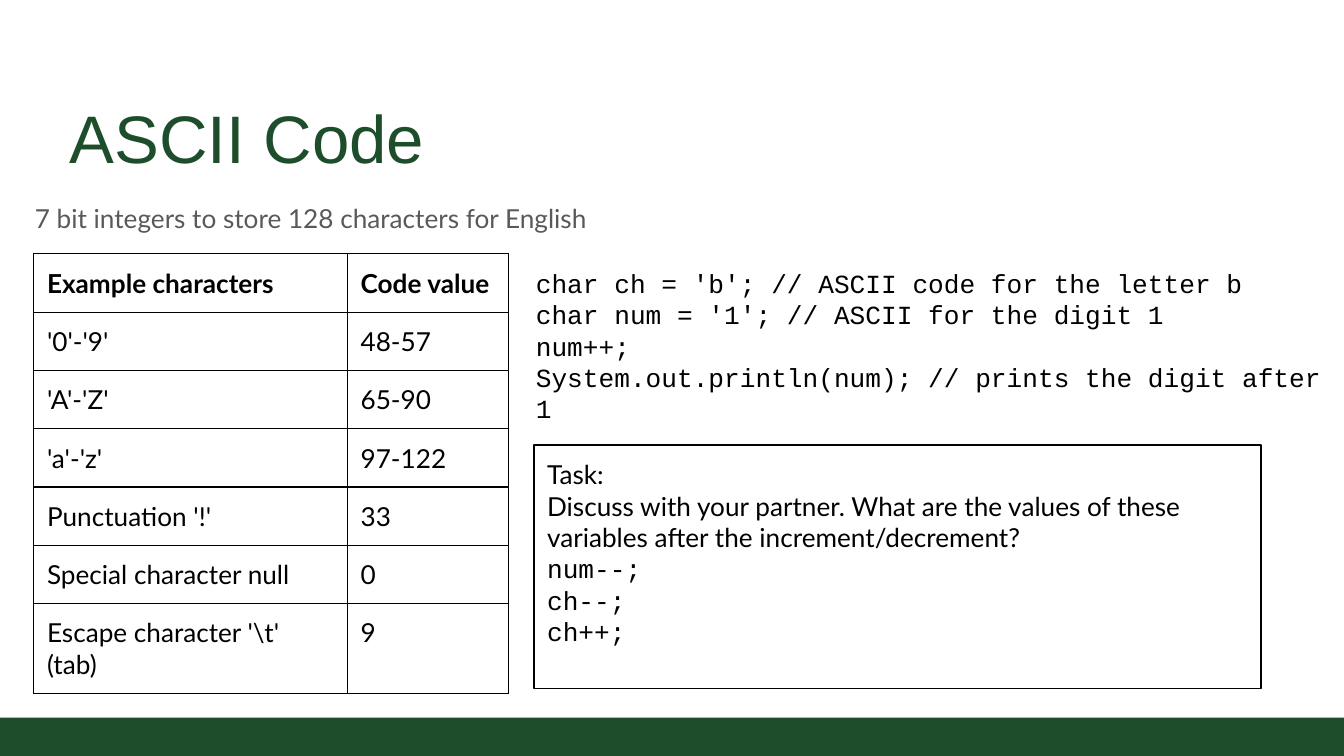
from dataclasses import dataclass
from typing import NamedTuple

from lxml.etree import SubElement
from pptx import Presentation
from pptx.dml.color import RGBColor
from pptx.enum.shapes import MSO_SHAPE
from pptx.enum.text import MSO_ANCHOR, PP_ALIGN
from pptx.oxml.ns import qn
from pptx.slide import Slide
from pptx.util import Pt


@dataclass(frozen=True)
class Theme:
    green: str = "1E4D2B"
    grey: str = "59595B"
    black: str = "000000"
    heading: str = "Arial"
    prose: str = "Lato"
    code: str = "Courier New"
    title_size: float = 36
    text_size: float = 14
    rule: float = 0.75
    inset: float = 7.2


class Box(NamedTuple):
    left: float
    top: float
    width: float
    height: float

    def lengths(self) -> list[Pt]:
        return [Pt(value) for value in self]


class Line(NamedTuple):
    text: str
    font: str


class CodeRange(NamedTuple):
    characters: str
    values: str


THEME = Theme()
COLUMN_WIDTHS = (168, 86.4)
ROW_HEIGHT = 30.25
CODE_RANGES = [
    CodeRange("Example characters", "Code value"),
    CodeRange("'0'-'9'", "48-57"),
    CodeRange("'A'-'Z'", "65-90"),
    CodeRange("'a'-'z'", "97-122"),
    CodeRange("Punctuation '!'", "33"),
    CodeRange("Special character null", "0"),
    CodeRange("Escape character '\\t' (tab)", "9"),
]
CODE = [
    "char ch = 'b'; // ASCII code for the letter b",
    "char num = '1'; // ASCII for the digit 1",
    "num++;",
    "System.out.println(num); // prints the digit after 1",
]
TASK = [
    "Task:",
    "Discuss with your partner. What are the values of these "
    "variables after the increment/decrement?",
]
TASK_CODE = ["num--;", "ch--;", "ch++;"]


def write(frame, lines: list[Line], *, size: float = THEME.text_size,
          color: str = THEME.black, bold: bool = False,
          spacing: float = 1, inset: float = THEME.inset,
          anchor: MSO_ANCHOR = MSO_ANCHOR.TOP) -> None:
    frame.word_wrap = True
    frame.vertical_anchor = anchor
    frame.margin_left = frame.margin_right = Pt(inset)
    frame.margin_top = frame.margin_bottom = Pt(inset)
    for index, line in enumerate(lines):
        paragraph = frame.add_paragraph() if index else frame.paragraphs[0]
        paragraph.alignment = PP_ALIGN.LEFT
        paragraph.line_spacing = spacing
        run = paragraph.add_run()
        run.text = line.text
        run.font.name = line.font
        run.font.size = Pt(size)
        run.font.bold = bold
        run.font.color.rgb = RGBColor.from_string(color)


def add_text(slide: Slide, box: Box, lines: list[Line], **style) -> None:
    write(slide.shapes.add_textbox(*box.lengths()).text_frame, lines, **style)


def add_rectangle(slide: Slide, box: Box, *, fill: str | None = None,
                  outline: str | None = None):
    rectangle = slide.shapes.add_shape(MSO_SHAPE.RECTANGLE, *box.lengths())
    rectangle.shadow.inherit = False
    if fill:
        rectangle.fill.solid()
        rectangle.fill.fore_color.rgb = RGBColor.from_string(fill)
    else:
        rectangle.fill.background()
    if outline:
        rectangle.line.color.rgb = RGBColor.from_string(outline)
        rectangle.line.width = Pt(THEME.rule)
    else:
        rectangle.line.fill.background()
    return rectangle


def add_borders(cell) -> None:
    properties = cell._tc.get_or_add_tcPr()
    for position, side in enumerate(("lnL", "lnR", "lnT", "lnB")):
        border = SubElement(properties, qn(f"a:{side}"), w=str(Pt(THEME.rule)))
        fill = SubElement(border, qn("a:solidFill"))
        SubElement(fill, qn("a:srgbClr"), val=THEME.black)
        properties.insert(position, border)


def add_code_table(slide: Slide, left: float, top: float) -> None:
    box = Box(left, top, sum(COLUMN_WIDTHS), ROW_HEIGHT * len(CODE_RANGES))
    table = slide.shapes.add_table(
        len(CODE_RANGES), len(COLUMN_WIDTHS), *box.lengths()).table
    table.first_row = table.horz_banding = False
    for column, width in zip(table.columns, COLUMN_WIDTHS):
        column.width = Pt(width)
    for row, code_range in enumerate(CODE_RANGES):
        table.rows[row].height = Pt(ROW_HEIGHT)
        for column, text in enumerate(code_range):
            cell = table.cell(row, column)
            cell.margin_left = cell.margin_right = Pt(THEME.inset)
            cell.margin_top = cell.margin_bottom = Pt(THEME.inset)
            cell.fill.background()
            add_borders(cell)
            write(cell.text_frame, [Line(text, THEME.prose)], bold=row == 0)


def main() -> None:
    deck = Presentation()
    deck.slide_width, deck.slide_height = Pt(720), Pt(405)
    slide = deck.slides.add_slide(deck.slide_layouts[6])

    add_rectangle(slide, Box(0, 384.5, 720, 20.5), fill=THEME.green)
    add_text(slide, Box(32.4, 47.5, 654.5, 52.5),
             [Line("ASCII Code", THEME.heading)], size=THEME.title_size,
             color=THEME.green, inset=5, anchor=MSO_ANCHOR.BOTTOM)
    add_text(slide, Box(13.7, 100, 661.7, 32),
             [Line("7 bit integers to store 128 characters for English",
                   THEME.prose)],
             color=THEME.grey, spacing=1.2, inset=5)
    add_code_table(slide, 18, 136)
    add_text(slide, Box(280, 136, 440, 93),
             [Line(text, THEME.code) for text in CODE])
    task = add_rectangle(slide, Box(286, 238.5, 389.5, 130.5),
                         outline=THEME.black)
    write(task.text_frame,
          [Line(text, THEME.prose) for text in TASK]
          + [Line(text, THEME.code) for text in TASK_CODE])

    deck.save("out.pptx")


if __name__ == "__main__":
    main()
